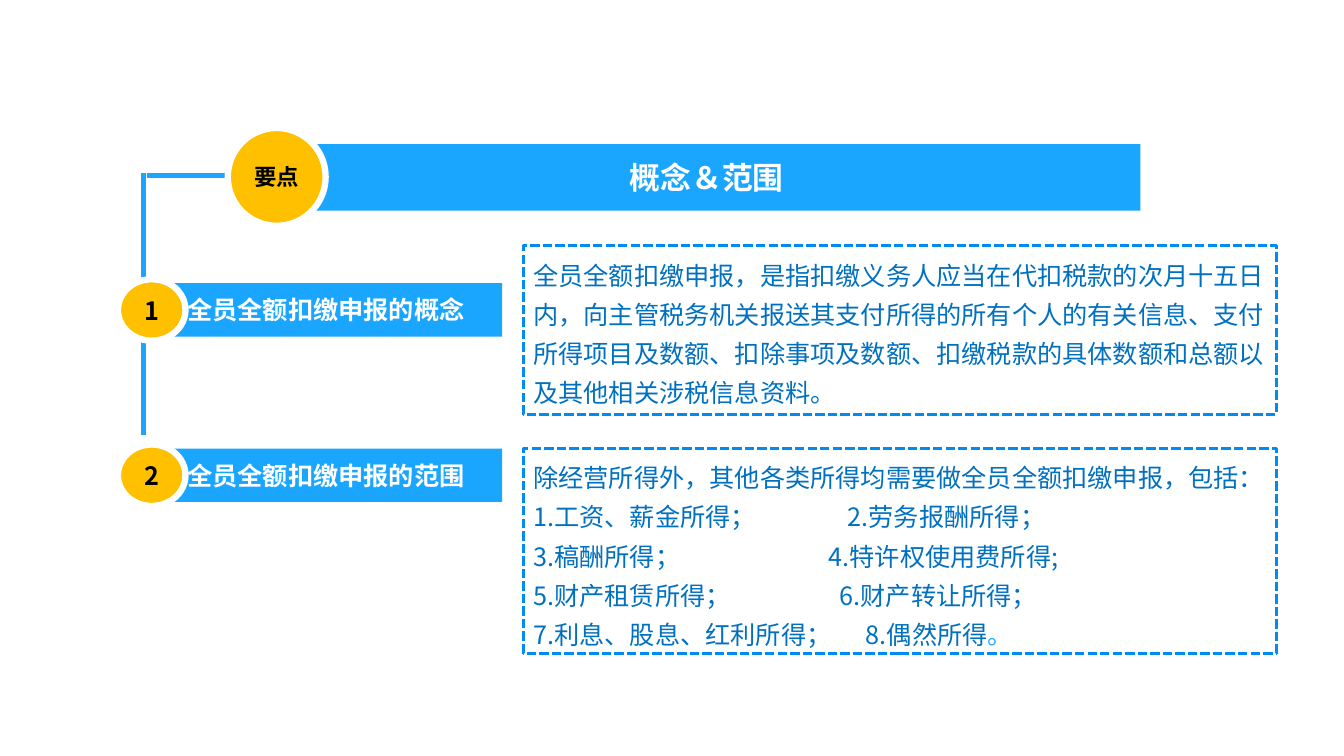
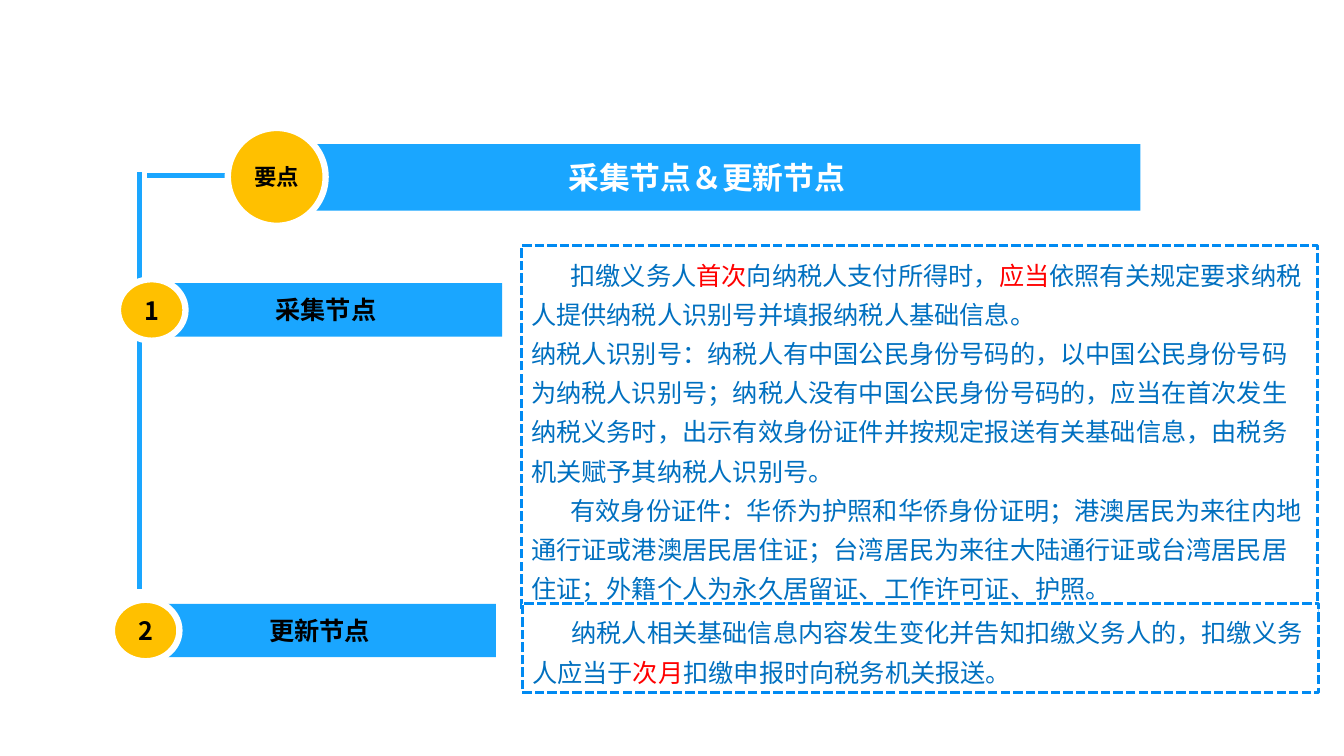
import pptx
import pptx.util
import pptx.dml.color
import pptx.enum.dml
import pptx.enum.shapes
import pptx.enum.text
import pptx.oxml.ns
import lxml.etree

Inches = pptx.util.Inches
Pt = pptx.util.Pt
qn = pptx.oxml.ns.qn
rgb = pptx.dml.color.RGBColor.from_string
SHAPES = pptx.enum.shapes.MSO_SHAPE
ANCHOR = pptx.enum.text.MSO_ANCHOR
ALIGN = pptx.enum.text.PP_ALIGN
AUTO_SIZE = pptx.enum.text.MSO_AUTO_SIZE

# Shared style
BLUE, BORDER, INK = "1AA6FF", "008AF2", "0070C0"
GOLD, RED, WHITE, BLACK = "FFC000", "FF0000", "FFFFFF", "000000"
CJK_FONT = "Noto Sans CJK SC"
INDENT = 0.39


def paint(shape, fill, border=None, width=0):
    shape.fill.solid()
    shape.fill.fore_color.rgb = rgb(fill)
    if border:
        shape.line.color.rgb = rgb(border)
        shape.line.width = Pt(width)
    else:
        shape.line.fill.background()


def write(shape, paragraphs, font, size, color, bold=True, align=ALIGN.CENTER, anchor=ANCHOR.MIDDLE):
    """Each paragraph is a list of (text, colour or None) spans."""
    frame = shape.text_frame
    frame.word_wrap = True
    frame.vertical_anchor = anchor
    frame.auto_size = AUTO_SIZE.NONE
    for number, spans in enumerate(paragraphs):
        para = frame.add_paragraph() if number else frame.paragraphs[0]
        para.alignment = align
        for text, accent in spans:
            span = para.add_run()
            span.text = text
            span.font.name = font
            span.font.size = Pt(size)
            span.font.bold = bold
            span.font.color.rgb = rgb(accent or color)
            east_asian = lxml.etree.SubElement(span.font._element, qn("a:ea"))
            east_asian.set("typeface", CJK_FONT)


# Panel: (left, top, width, height), then paragraphs as (first-line indent, tab stop, spans)
# Label: left, top, text
pages = [
    {
        "title": "概念＆范围",
        "stem": (1.42, 1.72, 4.32),
        "label_color": WHITE,
        "labels": [(1.54, 2.81, "全员全额扣缴申报的概念 "), (1.54, 4.45, "全员全额扣缴申报的范围 ")],
        "panels": [
            ((5.19, 2.44, 7.47, 1.67), [
                (0, 0, [("全员全额扣缴申报，是指扣缴义务人应当在代扣税款的次月十五日内，向主管税务机关报送其支付所得的所有个人的有关信息、支付所得项目及数额、扣除事项及数额、扣缴税款的具体数额和总额以及其他相关涉税信息资料。", None)]),
            ]),
            ((5.19, 4.45, 7.47, 2.03), [
                (0, 0, [("除经营所得外，其他各类所得均需要做全员全额扣缴申报，包括：", None)]),
                (0, 3.12, [("1.工资、薪金所得；\t2.劳务报酬所得；", None)]),
                (0, 2.93, [("3.稿酬所得；\t4.特许权使用费所得;", None)]),
                (0, 3.04, [("5.财产租赁所得；\t6.财产转让所得；", None)]),
                (0, 3.3, [("7.利息、股息、红利所得；\t8.偶然所得", None), ("。", BLUE)]),
            ]),
        ],
    },
    {
        "title": "采集节点＆更新节点",
        "stem": (1.38, 1.71, 5.84),
        "label_color": BLACK,
        "labels": [(1.54, 2.81, "采集节点 "), (1.48, 5.99, "更新节点 ")],
        "panels": [
            ((5.17, 2.44, 7.9, 3.63), [
                (INDENT, 0, [("扣缴义务人", None), ("首次", RED), ("向纳税人支付所得时，", None), ("应当", RED),
                             ("依照有关规定要求纳税人提供纳税人识别号并填报纳税人基础信息。", None)]),
                (0, 0, [("纳税人识别号：纳税人有中国公民身份号码的，以中国公民身份号码为纳税人识别号；纳税人没有中国公民身份号码的，应当在首次发生纳税义务时，出示有效身份证件并按规定报送有关基础信息，由税务机关赋予其纳税人识别号。", None)]),
                (INDENT, 0, [("有效身份证件：华侨为护照和华侨身份证明；港澳居民为来往内地通行证或港澳居民居住证；台湾居民为来往大陆通行证或台湾居民居住证；外籍个人为永久居留证、工作许可证、护照。", None)]),
            ]),
            ((5.18, 5.99, 7.9, 0.88), [
                (INDENT, 0, [("纳税人相关基础信息内容发生变化并告知扣缴义务人的，扣缴义务人应当于", None),
                             ("次月", RED), ("扣缴申报时向税务机关报送。", None)]),
            ]),
        ],
    },
]

deck = pptx.Presentation()
deck.slide_width = Inches(13.33)
deck.slide_height = Inches(7.5)

for content in pages:
    page = deck.slides.add_slide(deck.slide_layouts[5])

    # Title banner
    title = page.shapes.title
    title.left, title.top, title.width, title.height = map(Inches, (2.71, 1.43, 8.6, 0.66))
    paint(title, BLUE)
    write(title, [[(content["title"], None)]], "Calibri", 22, WHITE)

    # Dashed text panels
    for place, paragraphs in content["panels"]:
        panel = page.shapes.add_shape(SHAPES.RECTANGLE, *map(Inches, place))
        panel.shadow.inherit = False
        paint(panel, WHITE, BORDER, 2.25)
        panel.line.dash_style = pptx.enum.dml.MSO_LINE.SQUARE_DOT
        write(panel, [spans for _, _, spans in paragraphs], CJK_FONT, 18, INK,
              bold=False, align=ALIGN.LEFT, anchor=ANCHOR.TOP)
        panel.text_frame.auto_size = AUTO_SIZE.SHAPE_TO_FIT_TEXT
        for para, (indent, tab, _) in zip(panel.text_frame.paragraphs, paragraphs):
            para.line_spacing = Pt(28)
            properties = para._p.get_or_add_pPr()
            if indent:
                properties.set("indent", str(Inches(indent)))
            if tab:
                tab_list = lxml.etree.SubElement(properties, qn("a:tabLst"))
                lxml.etree.SubElement(tab_list, qn("a:tab"), pos=str(Inches(tab)), algn="l")

    # Branch to the banner and stem down to the labels
    stem_x, stem_top, stem_bottom = content["stem"]
    for ends in [(1.46, 1.74, 3.09, 1.74), (stem_x, stem_top, stem_x, stem_bottom)]:
        line = page.shapes.add_connector(pptx.enum.shapes.MSO_CONNECTOR.STRAIGHT, *map(Inches, ends))
        line.line.color.rgb = rgb(BLUE)
        line.line.width = Pt(3.6)
        lxml.etree.SubElement(line._element.spPr, qn("a:effectLst"))

    # Label bars
    for left, top, text in content["labels"]:
        bar = page.shapes.add_shape(SHAPES.RECTANGLE, *map(Inches, (left, top, 3.44, 0.53)))
        bar.shadow.inherit = False
        paint(bar, BLUE)
        write(bar, [[(text, None)]], "Arial", 18, content["label_color"])

    # Round badges: one on the banner, one numbered on each label
    badges = [((2.26, 1.27, 0.97, 0.97), "要点", "Calibri", 16)]
    for number, (left, top, _) in enumerate(content["labels"], 1):
        badges.append(((left - 0.37, top - 0.04, 0.67, 0.61), str(number), CJK_FONT, 18))
    for place, text, font, size in badges:
        badge = page.shapes.add_shape(SHAPES.OVAL, *map(Inches, place))
        badge.shadow.inherit = False
        paint(badge, GOLD, WHITE, 4.5)
        write(badge, [[(text, None)]], font, size, BLACK)

deck.save("out.pptx")
